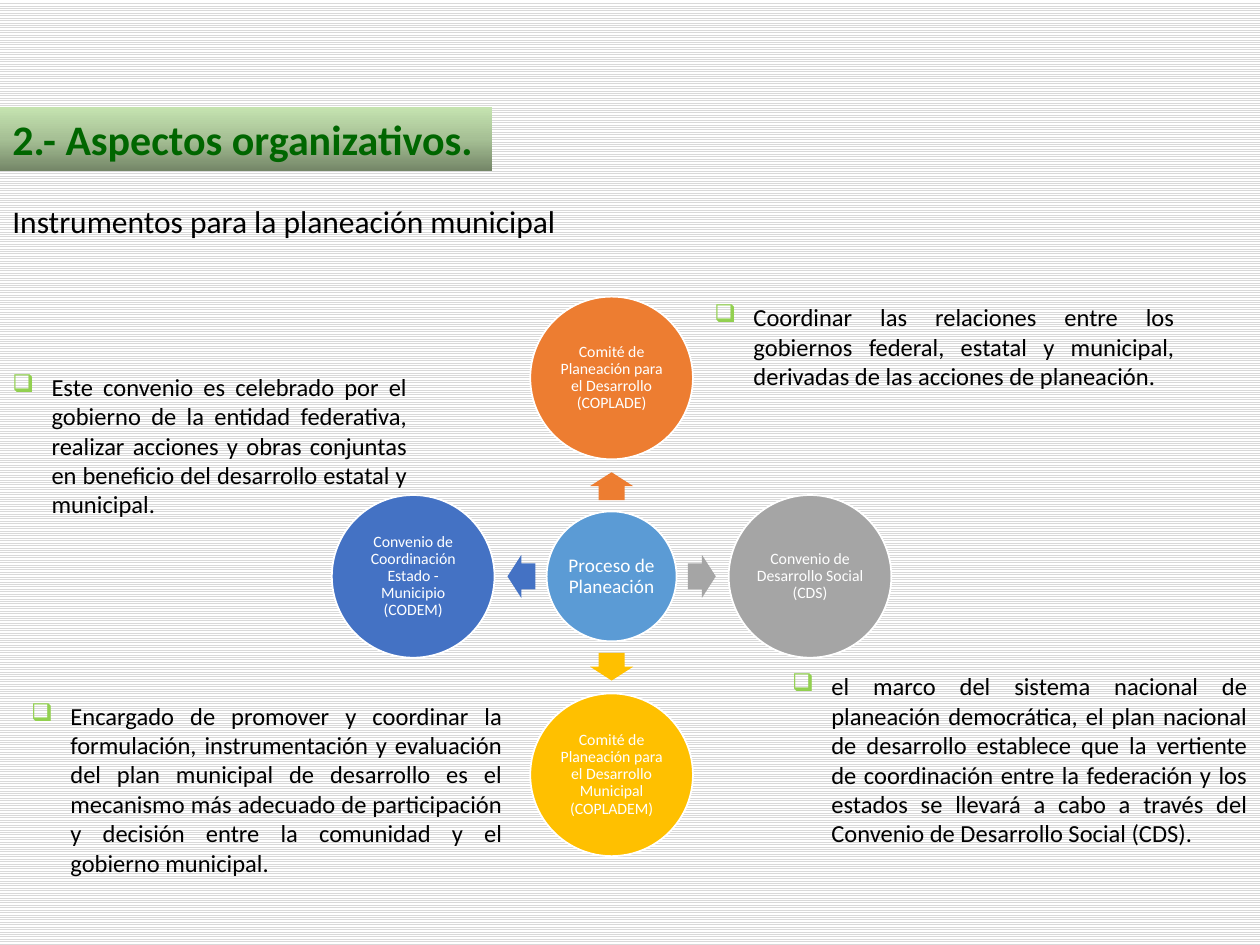
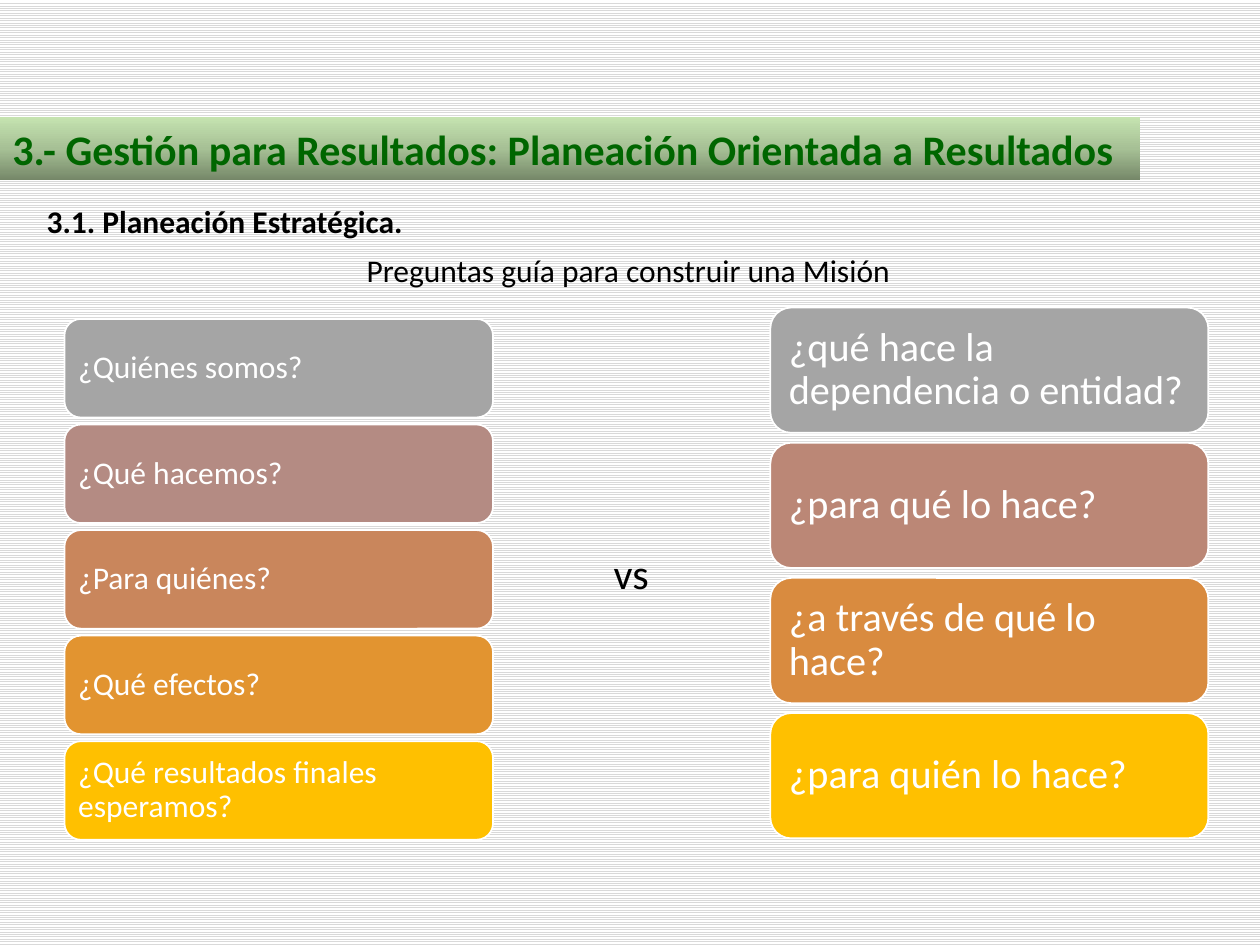
from copy import deepcopy
from math import cos, radians, sin

from lxml.etree import SubElement
from pptx import Presentation
from pptx.dml.color import RGBColor
from pptx.enum.dml import MSO_PATTERN as Pattern
from pptx.enum.shapes import MSO_SHAPE as Shape
from pptx.enum.text import MSO_ANCHOR as Anchor, MSO_AUTO_SIZE as AutoSize, PP_ALIGN as Align
from pptx.oxml.ns import qn
from pptx.util import Cm, Pt

FONT = "Calibri"
BLACK, WHITE = "000000", "FFFFFF"
TITLE_GREEN, BULLET_GREEN, STRIPE = "006600", "92D050", "D9D9D9"
BAND_STOPS = [(0, "758768"), (0.5, "A6C095"), (1, "C5E3B0")]
PAGE_W, PAGE_H = 25.4, 19.05
BAND_H = 1.28

ORBIT, HUB_D, SATELLITE_D = 4.0, 2.62, 3.28
ARROW_ORBIT, ARROW_W, ARROW_H = 1.82, 0.56, 0.87
SATELLITES = [
    (270, "ED7D31", "Comité de Planeación para el Desarrollo (COPLADE)"),
    (0, "A5A5A5", "Convenio de Desarrollo Social (CDS)"),
    (90, "FFC000", "Comité de Planeación para el Desarrollo Municipal (COPLADEM)"),
    (180, "4472C4", "Convenio de Coordinación Estado - Municipio (CODEM)"),
]
NOTES = [
    ((14.15, 5.97, 9.78, 2.06),
     "Coordinar las relaciones entre los gobiernos federal, estatal y municipal, "
     "derivadas de las acciones de planeación."),
    ((15.72, 13.41, 9.68, 3.84),
     "el marco del sistema nacional de planeación democrática, el plan nacional de desarrollo "
     "establece que la vertiente de coordinación entre la federación y los estados se llevará "
     "a cabo a través del Convenio de Desarrollo Social (CDS)."),
    ((0.38, 14, 10, 3.84),
     "Encargado de promover y coordinar la formulación, instrumentación y evaluación del plan "
     "municipal de desarrollo es el mecanismo más adecuado de participación y decisión entre "
     "la comunidad y el gobierno municipal."),
    ((0, 7.37, 8.46, 3.25),
     "Este convenio es celebrado por el gobierno de la entidad federativa, realizar acciones y "
     "obras conjuntas en beneficio del desarrollo estatal y municipal."),
]
MISSION_QUESTIONS = [
    ("¿Quiénes somos?", "A5A5A5"),
    ("¿Qué hacemos?", "B48B83"),
    ("¿Para quiénes?", "C9865C"),
    ("¿Qué efectos?", "E29430"),
    ("¿Qué resultados finales esperamos?", "FFC000"),
]
AGENCY_QUESTIONS = [
    ("¿qué hace la dependencia o entidad?", "A5A5A5"),
    ("¿para qué lo hace?", "BB8776"),
    ("¿a través de qué lo hace?", "D98B3F"),
    ("¿para quién lo hace?", "FFC000"),
]


def rgb(color):
    return RGBColor.from_string(color)


def write(holder, text, size, color, align=Align.LEFT, bold=False, spacing=None):
    paragraph = holder.text_frame.paragraphs[0]
    paragraph.text = text
    paragraph.alignment = align
    paragraph.line_spacing = spacing
    font = paragraph.font
    font.name, font.size, font.bold = FONT, Pt(size), bold
    font.color.rgb = rgb(color)
    return paragraph


def add_figure(slide, kind, box, fill=None, outlined=False):
    figure = slide.shapes.add_shape(kind, *map(Cm, box))
    figure.shadow.inherit = False
    if fill:
        figure.fill.solid()
        figure.fill.fore_color.rgb = rgb(fill)
    if outlined:
        figure.line.color.rgb = rgb(WHITE)
        figure.line.width = Pt(1)
    else:
        figure.line.fill.background()
    return figure


def add_label(slide, box, text, size, align=Align.LEFT, bold=False, wrap=False):
    label = slide.shapes.add_textbox(*map(Cm, box))
    label.text_frame.word_wrap = wrap
    label.text_frame.auto_size = AutoSize.SHAPE_TO_FIT_TEXT
    return write(label, text, size, BLACK, align, bold)


def fill_figure(figure, text, size, margin, align):
    frame = figure.text_frame
    frame.word_wrap = True
    frame.vertical_anchor = Anchor.MIDDLE
    frame.margin_left = frame.margin_right = frame.margin_top = frame.margin_bottom = Cm(margin)
    write(figure, text, size, WHITE, align, spacing=0.9)


def add_master_stripes(deck, slide):
    stripes = add_figure(slide, Shape.RECTANGLE, (0, 0.02, PAGE_W, PAGE_H - 0.02))
    stripes.fill.patterned()
    stripes.fill.pattern = Pattern.LIGHT_HORIZONTAL
    stripes.fill.fore_color.rgb = rgb(STRIPE)
    stripes.fill.back_color.rgb = rgb(WHITE)
    deck.slide_master.shapes.element.insert(2, stripes.element)


def add_title_band(slide, top, width, title):
    band = add_figure(slide, Shape.RECTANGLE, (0, top, width, BAND_H))
    band.fill.gradient()
    band.fill.gradient_angle = 90
    stop_list = band.element.spPr.find(".//" + qn("a:gsLst"))
    stop_list.insert(1, deepcopy(stop_list[0]))
    for stop, (position, color) in zip(band.fill.gradient_stops, BAND_STOPS):
        stop.position = position
        stop.color.rgb = rgb(color)
    band.text_frame.word_wrap = False
    band.text_frame.auto_size = AutoSize.SHAPE_TO_FIT_TEXT
    band.text_frame.vertical_anchor = Anchor.TOP
    write(band, title, 24, TITLE_GREEN, Align.JUSTIFY, bold=True)


def add_note(slide, box, text):
    paragraph = add_label(slide, box, text, 14, Align.JUSTIFY, wrap=True)
    properties = paragraph._p.get_or_add_pPr()
    properties.set("marL", str(Cm(0.79)))
    properties.set("indent", str(-Cm(0.79)))
    bullet_color = SubElement(properties, qn("a:buClr"))
    SubElement(bullet_color, qn("a:srgbClr"), val=BULLET_GREEN)
    SubElement(properties, qn("a:buChar"), char="❑")
    for run_defaults in properties.findall(qn("a:defRPr")):
        properties.append(run_defaults)


def add_planning_wheel(slide, center_x, center_y):
    def around(angle, distance, width, height):
        x = center_x + distance * cos(radians(angle))
        y = center_y + distance * sin(radians(angle))
        return x - width / 2, y - height / 2, width, height

    hub = add_figure(slide, Shape.OVAL, around(0, 0, HUB_D, HUB_D), "5B9BD5", True)
    fill_figure(hub, "Proceso de Planeación", 11, 0.04, Align.CENTER)
    for angle, color, name in SATELLITES:
        arrow = add_figure(slide, Shape.RIGHT_ARROW,
                           around(angle, ARROW_ORBIT, ARROW_W, ARROW_H), color)
        arrow.adjustments[0], arrow.adjustments[1] = 0.6, 0.5
        arrow.rotation = angle
        satellite = add_figure(slide, Shape.OVAL,
                               around(angle, ORBIT, SATELLITE_D, SATELLITE_D), color, True)
        fill_figure(satellite, name, 9, 0.03, Align.CENTER)


def add_question_stack(slide, box, questions, gap, size, margin):
    left, top, width, height = box
    card_h = (height - gap * (len(questions) - 1)) / len(questions)
    for row, (question, color) in enumerate(questions):
        card = add_figure(slide, Shape.ROUNDED_RECTANGLE,
                          (left, top + row * (card_h + gap), width, card_h), color, True)
        fill_figure(card, question, size, margin, Align.LEFT)


def build_organization(slide):
    add_title_band(slide, 2.16, 9.92, "2.- Aspectos organizativos.")
    add_label(slide, (0, 3.94, 11.76, 1.02), "Instrumentos para la planeación municipal", 18)
    add_planning_wheel(slide, 12.33, 11.62)
    for box, text in NOTES:
        add_note(slide, box, text)


def build_mission(slide):
    add_title_band(slide, 2.36, 22.98,
                   "3.- Gestión para Resultados: Planeación Orientada a Resultados")
    add_label(slide, (0.69, 3.94, 7.75, 1.02), "3.1. Planeación Estratégica.", 18,
              Align.JUSTIFY, bold=True)
    add_question_stack(slide, (1.3, 6.43, 8.64, 10.5), MISSION_QUESTIONS, 0.14, 18, 0.18)
    add_question_stack(slide, (15.53, 6.2, 8.83, 10.7), AGENCY_QUESTIONS, 0.2, 23, 0.25)
    add_label(slide, (11.43, 10.92, 2.59, 1.28), "vs", 24, Align.CENTER, wrap=True)
    add_label(slide, (7.14, 4.93, 11.18, 1.02), "Preguntas guía para construir una Misión", 18)


def main():
    deck = Presentation()
    deck.slide_width, deck.slide_height = Cm(PAGE_W), Cm(PAGE_H)
    blank = deck.slide_layouts[6]
    organization, mission = (deck.slides.add_slide(blank) for _ in range(2))
    add_master_stripes(deck, organization)
    build_organization(organization)
    build_mission(mission)
    deck.save("out.pptx")


if __name__ == "__main__":
    main()
